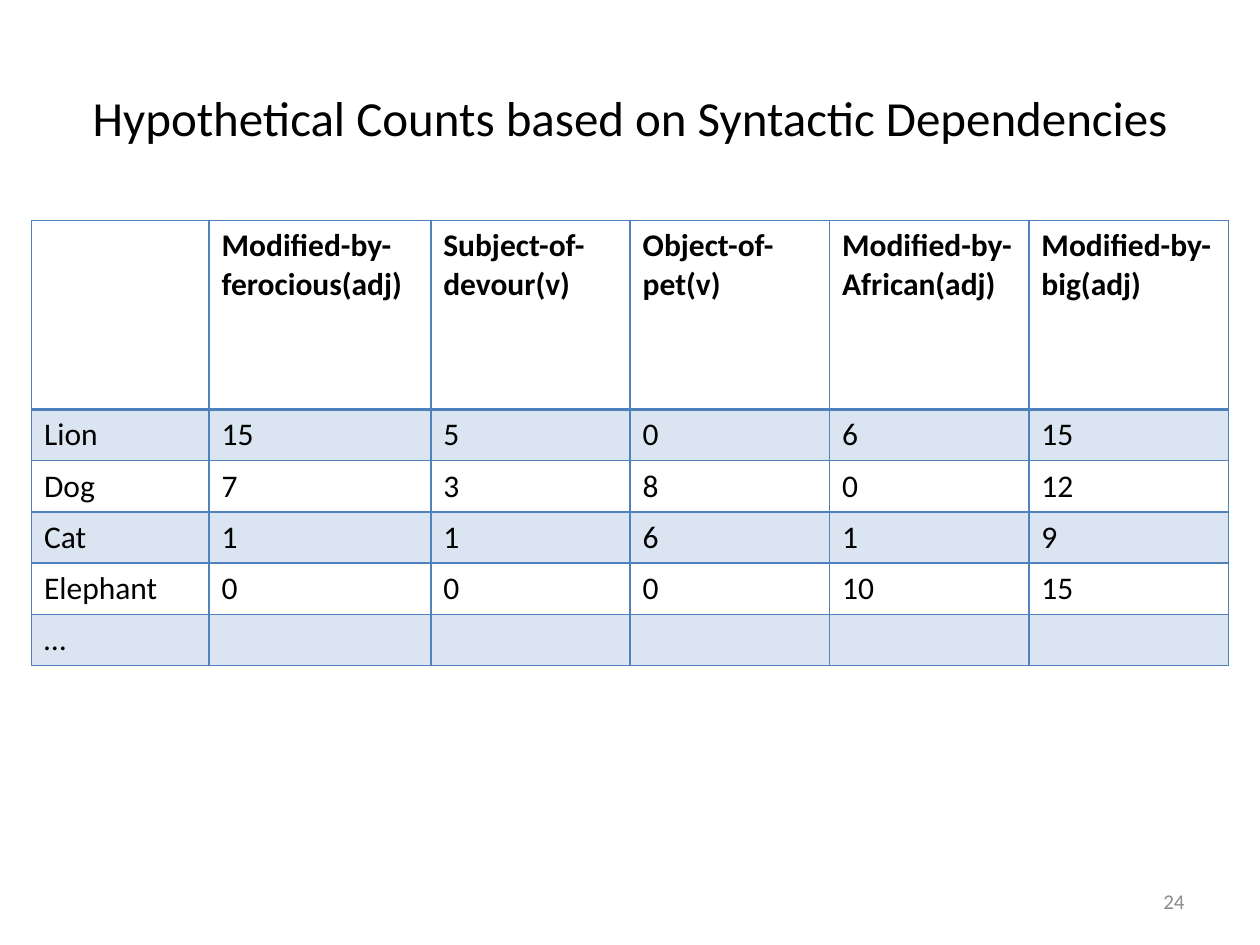
from dataclasses import dataclass

import pptx
import pptx.dml.color
import pptx.enum.text
import pptx.oxml
import pptx.oxml.ns
import pptx.util

Pt = pptx.util.Pt
RGB = pptx.dml.color.RGBColor
Align = pptx.enum.text.PP_ALIGN
Anchor = pptx.enum.text.MSO_ANCHOR


@dataclass(frozen=True)
class Theme:
    font: str = "Calibri"
    ink: str = "000000"
    muted: str = "8C8C8C"
    accent: str = "4F81BD"
    band_opacity: int = 20
    title_size: float = 28
    table_size: float = 18
    number_size: float = 12
    rule: float = 1
    header_rule: float = 2


@dataclass(frozen=True)
class Box:
    left: float
    top: float
    width: float
    height: float

    def lengths(self) -> tuple:
        return Pt(self.left), Pt(self.top), Pt(self.width), Pt(self.height)


@dataclass(frozen=True)
class AnimalCounts:
    animal: str
    counts: tuple


THEME = Theme()
TITLE_BOX = Box(36, 21.6, 648, 90)
TABLE_BOX = Box(18, 126, 684, 254.5)
NUMBER_BOX = Box(516, 500.4, 168, 28.8)

HEADER_HEIGHT = 108
ANIMAL_WIDTH, FEROCIOUS_WIDTH = 101.5, 126.7
FEATURES = (
    "Modified-by-ferocious(adj)",
    "Subject-of-devour(v)",
    "Object-of-pet(v)",
    "Modified-by-African(adj)",
    "Modified-by-big(adj)",
)
ANIMALS = (
    AnimalCounts("Lion", (15, 5, 0, 6, 15)),
    AnimalCounts("Dog", (7, 3, 8, 0, 12)),
    AnimalCounts("Cat", (1, 1, 6, 1, 9)),
    AnimalCounts("Elephant", (0, 0, 0, 10, 15)),
    AnimalCounts("…", ("",) * len(FEATURES)),
)


def write(frame, text: str, size: float, color: str, bold: bool = False,
          align: Align = Align.LEFT) -> None:
    paragraph = frame.paragraphs[0]
    paragraph.text = text
    paragraph.alignment = align
    font_format = {"name": THEME.font, "size": Pt(size), "bold": bold}
    for attribute, value in font_format.items():
        setattr(paragraph.font, attribute, value)
    paragraph.font.color.rgb = RGB.from_string(color)


def draw_borders(cell, widths: dict[str, float]) -> None:
    """Add border lines; call before filling, as lines precede the fill in XML."""
    for side, width in widths.items():
        cell._tc.get_or_add_tcPr().append(pptx.oxml.parse_xml(
            f'<a:ln{side} {pptx.oxml.ns.nsdecls("a")} w="{Pt(width)}">'
            f'<a:solidFill><a:srgbClr val="{THEME.accent}"/></a:solidFill>'
            f'</a:ln{side}>'))


def fill_band(cell) -> None:
    cell.fill.solid()
    cell.fill.fore_color.rgb = RGB.from_string(THEME.accent)
    accent = cell._tc.tcPr.find(
        f'{pptx.oxml.ns.qn("a:solidFill")}/{pptx.oxml.ns.qn("a:srgbClr")}')
    accent.append(pptx.oxml.parse_xml(
        f'<a:alpha {pptx.oxml.ns.nsdecls("a")} val="{THEME.band_opacity * 1000}"/>'))


def add_title(slide, text: str) -> None:
    title = slide.shapes.title
    title.left, title.top, title.width, title.height = TITLE_BOX.lengths()
    title.text_frame.vertical_anchor = Anchor.MIDDLE
    title.text_frame.word_wrap = True
    write(title.text_frame, text, THEME.title_size, THEME.ink, align=Align.CENTER)


def add_counts_table(slide) -> None:
    rows = [("", *FEATURES)] + [(entry.animal, *entry.counts) for entry in ANIMALS]
    counts = slide.shapes.add_table(
        len(rows), len(rows[0]), *TABLE_BOX.lengths()).table
    counts.horz_banding = False

    other_count = len(FEATURES) - 1
    other_width = (TABLE_BOX.width - ANIMAL_WIDTH - FEROCIOUS_WIDTH) / other_count
    widths = [ANIMAL_WIDTH, FEROCIOUS_WIDTH] + [other_width] * other_count
    for column, width in zip(counts.columns, widths):
        column.width = Pt(width)

    animal_height = (TABLE_BOX.height - HEADER_HEIGHT) / len(ANIMALS)
    for row_index, values in enumerate(rows):
        is_header = row_index == 0
        counts.rows[row_index].height = Pt(HEADER_HEIGHT if is_header else animal_height)
        borders = dict.fromkeys("LRTB", THEME.rule)
        if is_header:
            borders["B"] = THEME.header_rule
        elif row_index == 1:
            borders["T"] = THEME.header_rule
        for column_index, value in enumerate(values):
            cell = counts.cell(row_index, column_index)
            write(cell.text_frame, str(value), THEME.table_size, THEME.ink, is_header)
            draw_borders(cell, borders)
            if row_index % 2:
                fill_band(cell)
            else:
                cell.fill.background()


def add_slide_number(slide, number: str) -> None:
    frame = slide.shapes.add_textbox(*NUMBER_BOX.lengths()).text_frame
    frame.word_wrap = True
    frame.vertical_anchor = Anchor.MIDDLE
    write(frame, number, THEME.number_size, THEME.muted, align=Align.RIGHT)


def main() -> None:
    deck = pptx.Presentation()
    deck.slide_width, deck.slide_height = Pt(720), Pt(540)
    title_only = deck.slide_layouts[5]
    slide = deck.slides.add_slide(title_only)
    add_title(slide, "Hypothetical Counts based on Syntactic Dependencies")
    add_counts_table(slide)
    add_slide_number(slide, "24")
    deck.save("out.pptx")


if __name__ == "__main__":
    main()
